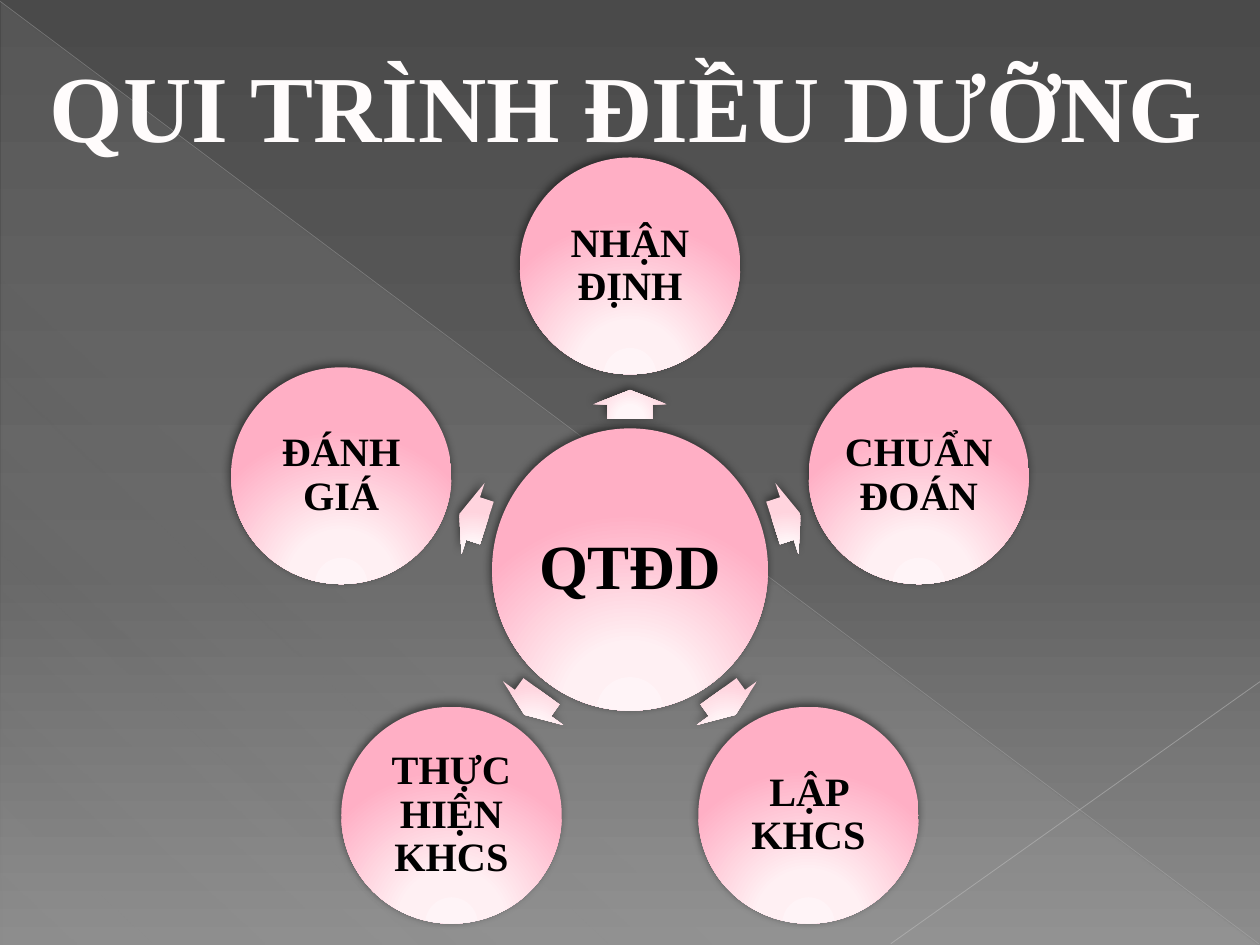
from math import cos, radians, sin

from lxml import etree
from pptx import Presentation
from pptx.dml.color import RGBColor
from pptx.enum.shapes import MSO_CONNECTOR as Connector, MSO_SHAPE as Shape
from pptx.enum.text import MSO_ANCHOR as Anchor, MSO_AUTO_SIZE as AutoSize, PP_ALIGN as Align
from pptx.oxml import parse_xml
from pptx.oxml.ns import nsdecls, qn
from pptx.util import Inches, Pt

TITLE = "QUI TRÌNH ĐIỀU DƯỠNG"
HUB = "QTĐD"
STEPS = ["NHẬN ĐỊNH", "CHUẨN ĐOÁN", "LẬP KHCS", "THỰC HIỆN KHCS", "ĐÁNH GIÁ"]

WIDTH, HEIGHT = 10, 7.5
CENTER = (WIDTH / 2, 4.52)
HUB_SIZE, STEP_SIZE, ARROW_SIZE = (2.19, 2.24), (1.75, 1.72), (0.23, 0.59)
STEP_RADIUS, ARROW_RADIUS = 2.41, 1.31

FONT = "Times New Roman"
LINEAR = '<a:lin ang="{}" scaled="0"/>'
GLOW = '<a:path path="circle"><a:fillToRect l="50000" t="155000" r="50000" b="-55000"/></a:path>'
BACKDROP = [(0, "4A4A4A", 100), (60, "626262", 100), (100, "8C8C8C", 100)]
SHEEN = [(0, "D2D2D2", 10), (70, "D2D2D2", 8), (100, "D2D2D2", 1)]
CIRCLE_FILL = [(0, "FFF4F7", 100), (34, "FFF0F3", 100), (100, "FFAFC5", 100)]
ARROW_FILL = [(0, "FFF8FA", 100), (34, "FFF6F8", 100), (100, "FFD4DE", 100)]
RAYS = [((0, 0.01), (9.99, 7.49), "BFBFBF", 0.39, 35),
        ((10, 5.41), (7.07, 7.49), "C6C6C6", 0.47, 45)]


def color(value):
    return RGBColor.from_string(value)


def set_gradient(fill, holder, stops, direction):
    fill.solid()
    marks = "".join(
        f'<a:gs pos="{pos * 1000}"><a:srgbClr val="{value}"><a:alpha val="{alpha * 1000}"/>'
        f'</a:srgbClr></a:gs>' for pos, value, alpha in stops)
    gradient = parse_xml(f'<a:gradFill {nsdecls("a")} rotWithShape="1"><a:gsLst>{marks}</a:gsLst>'
                         f'{direction}</a:gradFill>')
    holder.replace(holder.find(qn("a:solidFill")), gradient)


def add_shape(s, kind, center, size, stops, direction):
    (x, y), (w, h) = center, size
    sp = s.shapes.add_shape(kind, *map(Inches, (x - w / 2, y - h / 2, w, h)))
    sp.shadow.inherit = False
    sp.line.fill.background()
    set_gradient(sp.fill, sp.element.spPr, stops, direction)
    return sp


def add_shadow(sp):
    effects = sp.element.spPr.find(qn("a:effectLst"))
    effects.append(parse_xml(
        f'<a:outerShdw {nsdecls("a")} blurRad="{Pt(5)}" dist="{Pt(2)}" dir="{245 * 60000}" '
        f'rotWithShape="0"><a:srgbClr val="000000"><a:alpha val="50000"/></a:srgbClr></a:outerShdw>'))


def write(tf, text, size, value, spacing, inset):
    formats = {"word_wrap": True, "vertical_anchor": Anchor.MIDDLE}
    if inset is not None:
        formats |= {f"margin_{side}": Inches(inset) for side in ("left", "top", "right", "bottom")}
    for name, setting in formats.items():
        setattr(tf, name, setting)
    p = tf.paragraphs[0]
    p.alignment, p.line_spacing = Align.CENTER, spacing
    r = p.add_run()
    r.text = text
    for name, setting in {"name": FONT, "size": Pt(size), "bold": True}.items():
        setattr(r.font, name, setting)
    r.font.color.rgb = color(value)


def add_circle(s, text, center, size, points, inset):
    sp = add_shape(s, Shape.OVAL, center, size, CIRCLE_FILL, GLOW)
    add_shadow(sp)
    write(sp.text_frame, text, points, "000000", 0.9, inset)


def add_arrow(s, center, angle):
    sp = add_shape(s, Shape.RIGHT_ARROW, center, ARROW_SIZE, ARROW_FILL, GLOW)
    add_shadow(sp)
    sp.adjustments[0], sp.adjustments[1] = 0.6, 0.5
    sp.rotation = angle % 360


def add_ray(s, start, end, value, width, alpha):
    ray = s.shapes.add_connector(Connector.STRAIGHT, *map(Inches, start + end))
    ray.line.width = Pt(width)
    ray.line.color.rgb = color(value)
    tint = ray.element.spPr.find(".//" + qn("a:srgbClr"))
    etree.SubElement(tint, qn("a:alpha")).set("val", str(alpha * 1000))
    etree.SubElement(ray.element.spPr, qn("a:effectLst"))


def around(radius, angle):
    return (CENTER[0] + radius * cos(radians(angle)), CENTER[1] + radius * sin(radians(angle)))


def main():
    """Build the nursing process slide: a hub with five steps around it."""
    prs = Presentation()
    prs.slide_width, prs.slide_height = Inches(WIDTH), Inches(HEIGHT)
    s = prs.slides.add_slide(prs.slide_layouts[5])

    fill = s.background.fill
    fill.solid()
    set_gradient(fill, s.element.find(".//" + qn("p:bgPr")), BACKDROP, LINEAR.format(90 * 60000))
    add_shape(s, Shape.RIGHT_TRIANGLE, (WIDTH / 2, 3.76), (9.98, 7.48), SHEEN,
              LINEAR.format(133 * 60000))
    for ray in RAYS:
        add_ray(s, *ray)

    add_circle(s, HUB, CENTER, HUB_SIZE, 36, 0.05)
    for i, step in enumerate(STEPS):
        angle = 360 / len(STEPS) * i - 90
        add_arrow(s, around(ARROW_RADIUS, angle), angle)
        add_circle(s, step, around(STEP_RADIUS, angle), STEP_SIZE, 23, 0.03)

    title = s.shapes.title
    title.left, title.top, title.width, title.height = map(Inches, (-0.24, 0.33, 10.42, 1.01))
    write(title.text_frame, TITLE, 54, "FFFCFC", 1.0, None)
    title.text_frame.auto_size = AutoSize.SHAPE_TO_FIT_TEXT
    title.element.getparent().append(title.element)

    prs.save("out.pptx")


if __name__ == "__main__":
    main()
